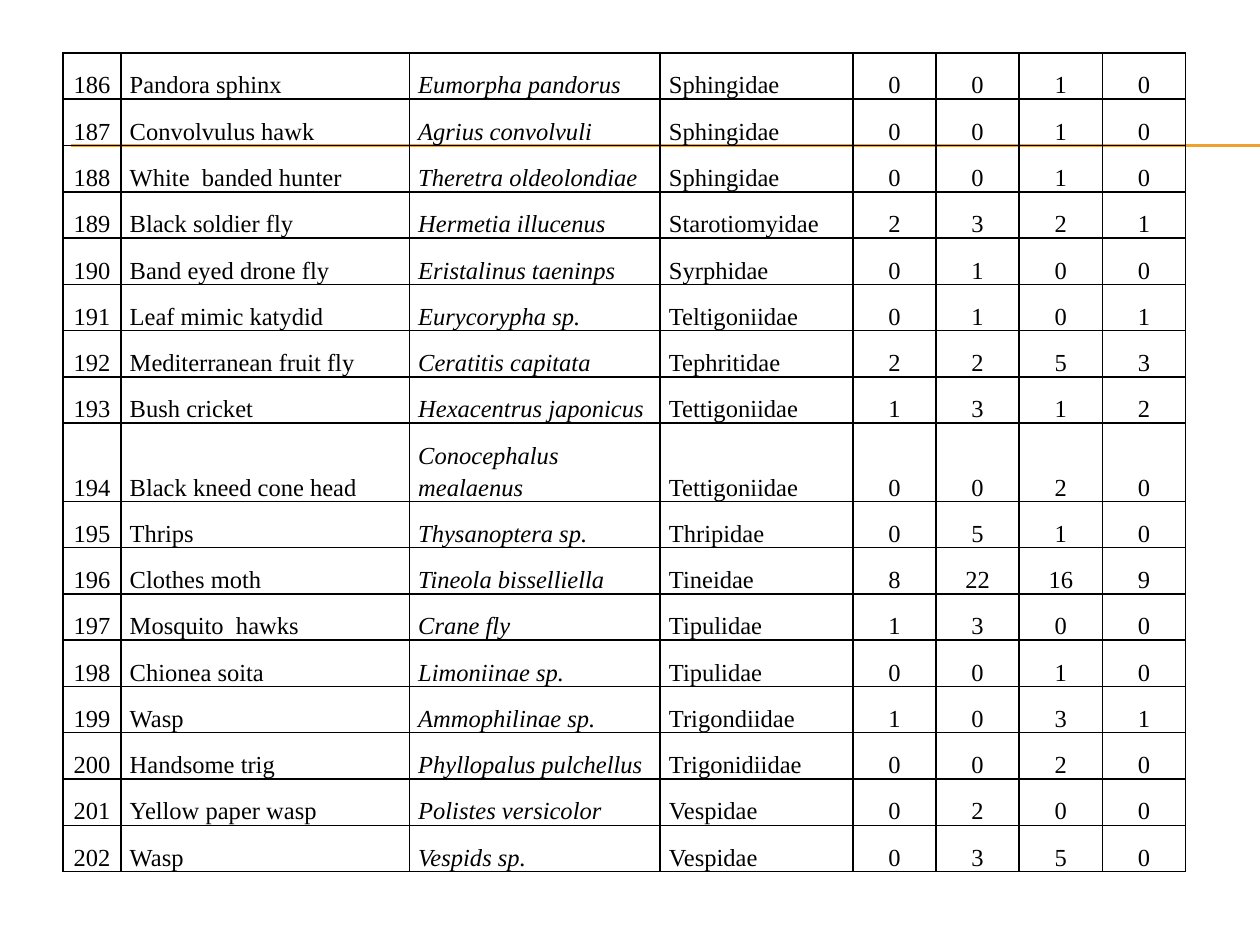
"""Build a slide with a table of insect species and their counts at four sites."""
from lxml import etree
from pptx import Presentation, util as u
from pptx.dml import color
from pptx.enum import shapes, text
from pptx.oxml import ns

INSECTS = [
    ("Pandora sphinx", "Eumorpha pandorus", "Sphingidae", 0, 0, 1, 0),
    ("Convolvulus hawk", "Agrius convolvuli", "Sphingidae", 0, 0, 1, 0),
    ("White  banded hunter", "Theretra oldeolondiae", "Sphingidae", 0, 0, 1, 0),
    ("Black soldier fly", "Hermetia illucenus", "Starotiomyidae", 2, 3, 2, 1),
    ("Band eyed drone fly", "Eristalinus taeninps", "Syrphidae", 0, 1, 0, 0),
    ("Leaf mimic katydid", "Eurycorypha sp.", "Teltigoniidae", 0, 1, 0, 1),
    ("Mediterranean fruit fly", "Ceratitis capitata", "Tephritidae", 2, 2, 5, 3),
    ("Bush cricket", "Hexacentrus japonicus", "Tettigoniidae", 1, 3, 1, 2),
    ("Black kneed cone head", "Conocephalus mealaenus", "Tettigoniidae", 0, 0, 2, 0),
    ("Thrips", "Thysanoptera sp.", "Thripidae", 0, 5, 1, 0),
    ("Clothes moth", "Tineola bisselliella", "Tineidae", 8, 22, 16, 9),
    ("Mosquito  hawks", "Crane fly", "Tipulidae", 1, 3, 0, 0),
    ("Chionea soita", "Limoniinae sp.", "Tipulidae", 0, 0, 1, 0),
    ("Wasp", "Ammophilinae sp.", "Trigondiidae", 1, 0, 3, 1),
    ("Handsome trig", "Phyllopalus pulchellus", "Trigonidiidae", 0, 0, 2, 0),
    ("Yellow paper wasp", "Polistes versicolor", "Vespidae", 0, 2, 0, 0),
    ("Wasp", "Vespids sp.", "Vespidae", 0, 3, 5, 0),
]
FIRST_NUMBER = 186
COLUMN_WIDTHS = [0.46, 2.29, 1.99, 1.53] + [0.66] * 4
TABLE_HEIGHT, TALL_HEIGHT, TALL_ROW = 6.5, 0.62, 8
ROW_HEIGHT = (TABLE_HEIGHT - TALL_HEIGHT) / (len(INSECTS) - 1)
SCIENTIFIC_COLUMN, LEFT_COLUMNS = 2, (1, 2, 3)

CELL_FORMAT = {
    "vertical_anchor": text.MSO_ANCHOR.BOTTOM,
    "margin_left": u.Inches(0.07),
    "margin_right": u.Inches(0.07),
    "margin_top": 0,
    "margin_bottom": 0,
}
FONT_FORMAT = {"name": "Times New Roman", "size": u.Pt(14)}


def rgb(value):
    return color.RGBColor.from_string(value)


def add_borders(cell, value, width):
    properties = cell._tc.get_or_add_tcPr()
    for side in ("a:lnL", "a:lnR", "a:lnT", "a:lnB"):
        border = etree.SubElement(properties, ns.qn(side), w=str(u.Pt(width)))
        fill = etree.SubElement(border, ns.qn("a:solidFill"))
        etree.SubElement(fill, ns.qn("a:srgbClr"), val=value)


deck = Presentation()
deck.slide_width, deck.slide_height = u.Inches(10), u.Inches(7.5)
page = deck.slides.add_slide(deck.slide_layouts[6])

for height in (1.15, 1.16):
    rule = page.shapes.add_connector(
        shapes.MSO_CONNECTOR.STRAIGHT,
        u.Inches(0.56), u.Inches(height), deck.slide_width, u.Inches(height))
    rule.line.color.rgb = rgb("F0A22E")
    rule.line.width = u.Pt(0.75)
    etree.SubElement(rule._element.spPr, ns.qn("a:effectLst"))

table = page.shapes.add_table(
    len(INSECTS), len(COLUMN_WIDTHS), u.Inches(0.5), u.Inches(0.42),
    u.Inches(sum(COLUMN_WIDTHS)), u.Inches(TABLE_HEIGHT)).table
table.first_row = table.horz_banding = False
for column, width in zip(table.columns, COLUMN_WIDTHS):
    column.width = u.Inches(width)

for row_index, insect in enumerate(INSECTS):
    tall = row_index == TALL_ROW
    table.rows[row_index].height = u.Inches(TALL_HEIGHT if tall else ROW_HEIGHT)
    for column_index, value in enumerate((FIRST_NUMBER + row_index, *insect)):
        cell = table.cell(row_index, column_index)
        for name, setting in CELL_FORMAT.items():
            setattr(cell, name, setting)
        add_borders(cell, "000000", 1)
        cell.fill.background()
        para = cell.text_frame.paragraphs[0]
        para.line_spacing = 1.15
        para.alignment = (text.PP_ALIGN.LEFT if column_index in LEFT_COLUMNS
                          else text.PP_ALIGN.CENTER)
        span = para.add_run()
        span.text = str(value)
        for name, setting in FONT_FORMAT.items():
            setattr(span.font, name, setting)
        span.font.italic = column_index == SCIENTIFIC_COLUMN
        span.font.color.rgb = rgb("000000")

deck.save("out.pptx")
